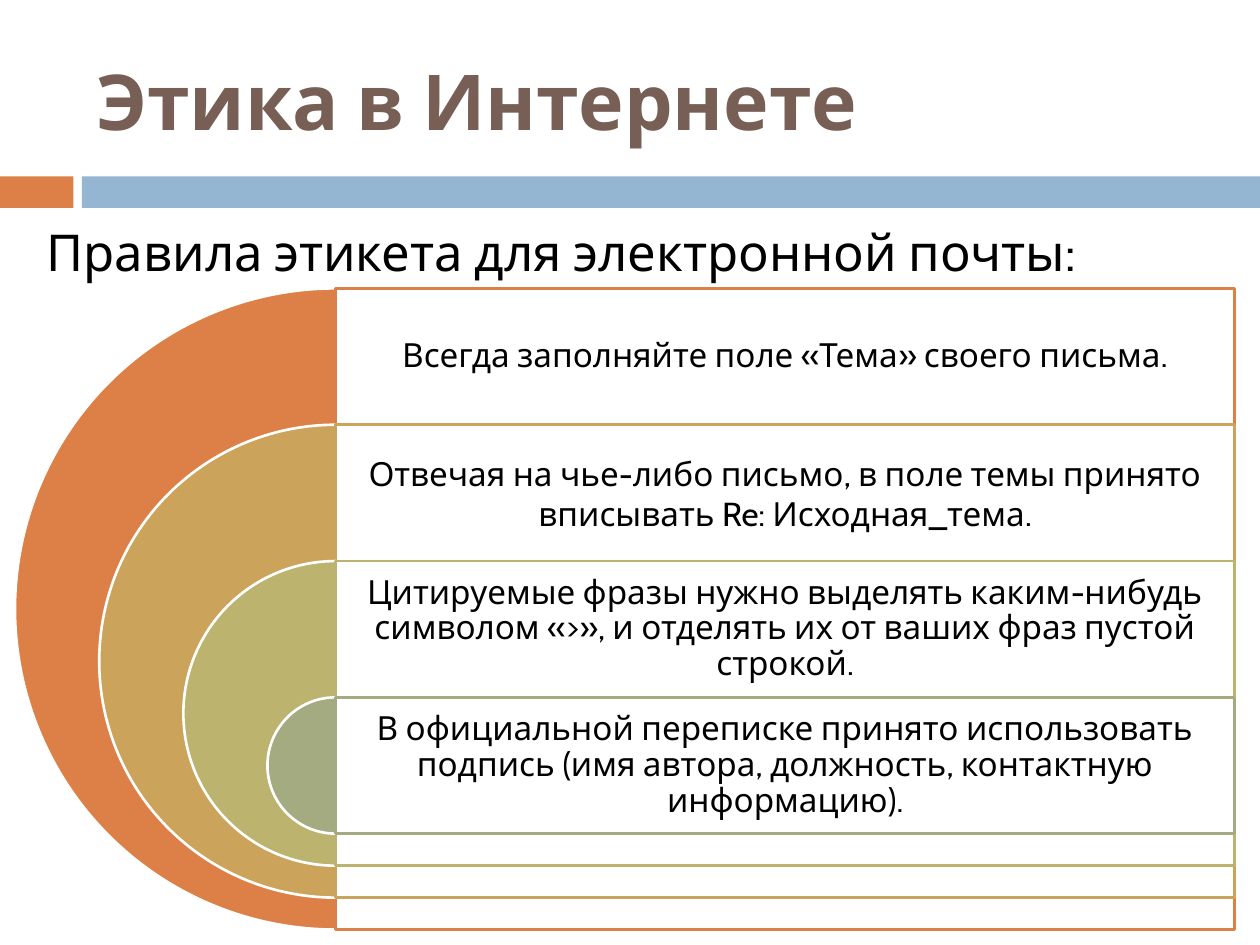
from lxml import etree
from pptx import Presentation
from pptx.dml.color import RGBColor
from pptx.enum.shapes import MSO_SHAPE
from pptx.enum.text import MSO_ANCHOR, PP_ALIGN
from pptx.oxml.ns import qn
from pptx.util import Pt

RECTANGLE, PIE = MSO_SHAPE.RECTANGLE, MSO_SHAPE.PIE
TOP, MIDDLE = MSO_ANCHOR.TOP, MSO_ANCHOR.MIDDLE
LEFT, CENTER = PP_ALIGN.LEFT, PP_ALIGN.CENTER

FONT = "Cabin"
BLACK = RGBColor(0x00, 0x00, 0x00)
WHITE = RGBColor(0xFF, 0xFF, 0xFF)
BROWN = RGBColor(0x77, 0x5F, 0x55)
ORANGE = RGBColor(0xDD, 0x80, 0x47)
BLUE = RGBColor(0x94, 0xB6, 0xD2)
OCHRE = RGBColor(0xCC, 0xA3, 0x5B)
OLIVE = RGBColor(0xBB, 0xB3, 0x6E)
SAGE = RGBColor(0xA5, 0xAB, 0x81)

# Text, colour and line spacing of each rule, from the outer ring inwards
RULES = [
    ("Всегда заполняйте поле «Тема» своего письма.", ORANGE, 0.9),
    ("Отвечая на чье-либо письмо, в поле темы принято вписывать "
     "Re: Исходная_тема.", OCHRE, 1.0),
    ("Цитируемые фразы нужно выделять каким-нибудь символом «>», "
     "и отделять их от ваших фраз пустой строкой.", OLIVE, 0.9),
    ("В официальной переписке принято использовать подпись "
     "(имя автора, должность, контактную информацию).", SAGE, 0.9),
]


def add_filled_shape(slide, kind, left, top, width, height, fill, line=None):
    shape = slide.shapes.add_shape(kind, Pt(left), Pt(top), Pt(width), Pt(height))
    shape.shadow.inherit = False
    shape.fill.solid()
    shape.fill.fore_color.rgb = fill
    if line is None:
        shape.line.fill.background()
    else:
        shape.line.color.rgb = line
        shape.line.width = Pt(1.5)
    return shape


def add_text(slide, left, top, width, height, text, size, color=BLACK,
             anchor=MIDDLE, align=LEFT, bold=False):
    box = slide.shapes.add_textbox(Pt(left), Pt(top), Pt(width), Pt(height))
    text_frame = box.text_frame
    text_frame.word_wrap = True
    text_frame.vertical_anchor = anchor
    text_frame.text = text
    paragraph = text_frame.paragraphs[0]
    paragraph.alignment = align
    font = paragraph.runs[0].font
    font.name, font.size, font.bold = FONT, Pt(size), bold
    font.color.rgb = color
    return text_frame


def set_opacity(shape, percent):
    color = shape.fill._xPr.find(qn("a:solidFill"))[0]
    etree.SubElement(color, qn("a:alpha"), val=str(percent * 1000))


def add_header(slide, left, top, width):
    add_filled_shape(slide, RECTANGLE, left, top + 100.8, 42, 18, ORANGE)
    add_filled_shape(slide, RECTANGLE, left + 46.8, top + 100.8, width - 46.8, 18, BLUE)
    add_text(slide, left + 48, top + 18, 642, 78, "Этика в Интернете", 44,
             color=BROWN, bold=True)


def add_subtitle(slide, left, top, width, height):
    text_frame = add_text(slide, left, top, width, height,
                          "Правила этикета для электронной почты:", 29, anchor=TOP)
    text_frame.paragraphs[0].space_before = Pt(7)


def add_rule_rings(slide, left, top, width, height):
    """Nested half discs, each with a panel of the same height to its right."""
    center = left + height / 2
    panel_width = left + width - center
    band = 77.9
    shrink = (height - band) / (len(RULES) - 1)
    for index, (text, color, line_spacing) in enumerate(RULES):
        diameter = height - index * shrink
        ring_top = top + index * band
        half_disc = add_filled_shape(slide, PIE, center - diameter / 2, ring_top,
                                     diameter, diameter, color, WHITE)
        # Angles of 90 and 270 degrees
        half_disc.adjustments[0] = 54
        half_disc.adjustments[1] = 162

        panel = add_filled_shape(slide, RECTANGLE, center, ring_top,
                                 panel_width, diameter, WHITE, color)
        set_opacity(panel, 90)

        text_frame = add_text(slide, center, ring_top, panel_width, band, text, 19,
                              align=CENTER)
        text_frame.margin_left = text_frame.margin_right = Pt(5.7)
        text_frame.margin_top = text_frame.margin_bottom = Pt(5.7)
        text_frame.paragraphs[0].line_spacing = line_spacing


def main():
    presentation = Presentation()
    presentation.slide_width, presentation.slide_height = Pt(720), Pt(540)
    slide = presentation.slides.add_slide(presentation.slide_layouts[6])
    add_header(slide, 0, 0, 720)
    add_subtitle(slide, 19.5, 122.4, 670, 42)
    add_rule_rings(slide, 8.6, 164.8, 697, 366.4)
    presentation.save("out.pptx")


if __name__ == "__main__":
    main()
